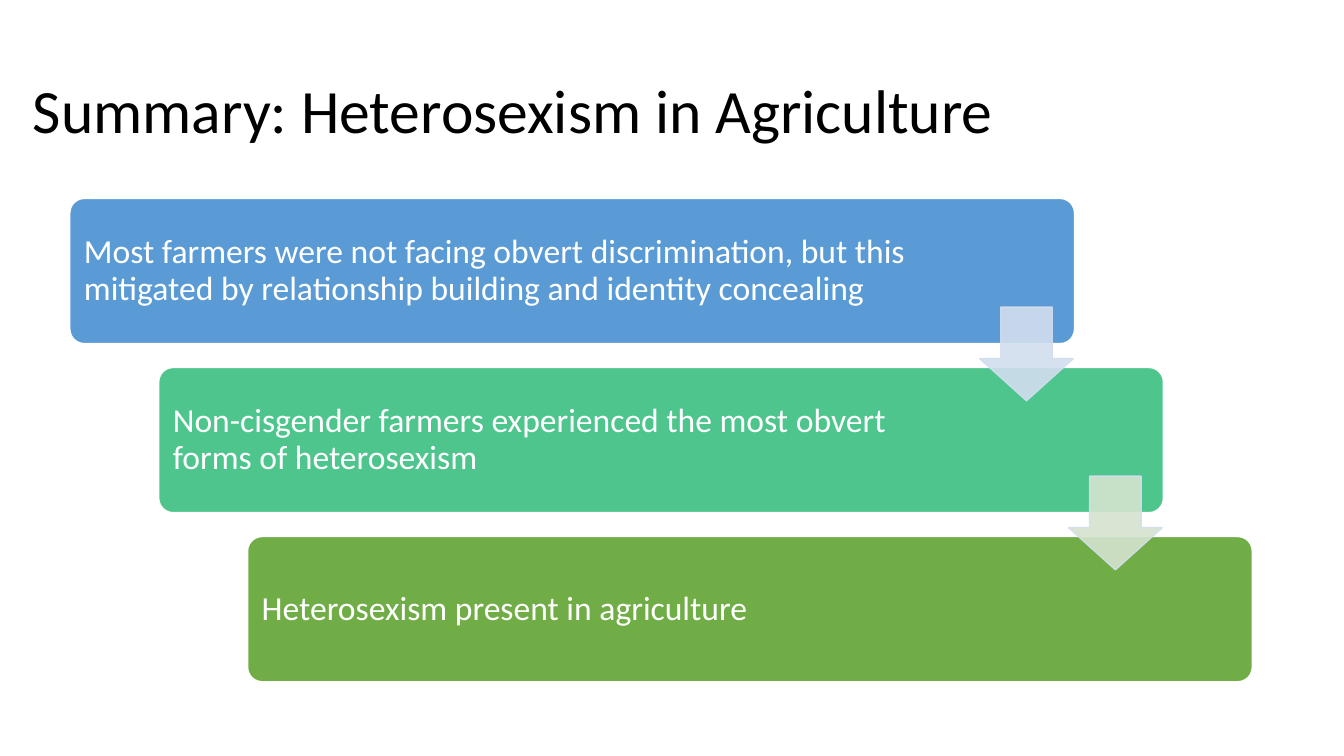
"""Build the summary slide: three staggered steps joined by down arrows."""
from dataclasses import dataclass

from lxml import etree
from pptx import Presentation
from pptx.dml.color import RGBColor
from pptx.enum import shapes, text
from pptx.oxml import ns
from pptx.util import Cm, Pt


@dataclass(frozen=True)
class Theme:
    font: str = "Calibri"
    title_size: int = 44
    step_size: int = 24
    title_color: str = "000000"
    white: str = "FFFFFF"
    step_fills: tuple = ("5B9BD5", "4DC58D", "70AD47")
    arrow_fills: tuple = ("D2DEEF", "D5E3CF")
    arrow_line: str = "D2DEEF"
    arrow_opacity: int = 90


def write_text(box, wording, size, color):
    frame = box.text_frame
    frame.text = wording
    frame.word_wrap = True
    frame.vertical_anchor = text.MSO_ANCHOR.MIDDLE
    para = frame.paragraphs[0]
    para.alignment = text.PP_ALIGN.LEFT
    para.line_spacing = 0.9
    font = para.runs[0].font
    font.name = theme.font
    font.size = Pt(size)
    font.color.rgb = RGBColor.from_string(color)


def add_block(kind, left, top, width, height, fill, line):
    block = page.shapes.add_shape(kind, Cm(left), Cm(top), Cm(width), Cm(height))
    block.shadow.inherit = False
    block.fill.solid()
    block.fill.fore_color.rgb = RGBColor.from_string(fill)
    block.line.color.rgb = RGBColor.from_string(line)
    block.line.width = Pt(1)
    return block


theme = Theme()
deck = Presentation()
deck.slide_width, deck.slide_height = Cm(33.87), Cm(19.05)
page = deck.slides.add_slide(deck.slide_layouts[6])

title = page.shapes.add_textbox(Cm(0.58), Cm(1.02), Cm(30.94), Cm(3.68))
write_text(title, "Summary: Heterosexism in Agriculture", theme.title_size, theme.title_color)

shift_x, shift_y = 2.24, 4.26
steps = [
    ("Most farmers were not facing obvert discrimination, but this "
     "mitigated by relationship building and identity concealing", 3.99),
    ("Non-cisgender farmers experienced the most obvert forms of heterosexism", 4.88),
    ("Heterosexism present in agriculture", 4.88),
]
for index, ((wording, right_margin), fill) in enumerate(zip(steps, theme.step_fills)):
    step = add_block(shapes.MSO_SHAPE.ROUNDED_RECTANGLE, 1.76 + index * shift_x,
                     5 + index * shift_y, 25.32, 3.66, fill, theme.white)
    step.adjustments[0] = 0.1
    write_text(step, wording, theme.step_size, theme.white)
    step.text_frame.margin_left = Cm(0.25)
    step.text_frame.margin_right = Cm(right_margin)

for index, fill in enumerate(theme.arrow_fills):
    arrow = add_block(shapes.MSO_SHAPE.DOWN_ARROW, 24.69 + index * shift_x,
                      7.74 + index * shift_y, 2.36, 2.36, fill, theme.arrow_line)
    arrow.adjustments[0] = 0.55
    arrow.adjustments[1] = 0.45
    for color in arrow.element.spPr.iter(ns.qn("a:srgbClr")):
        alpha = etree.SubElement(color, ns.qn("a:alpha"))
        alpha.set("val", str(theme.arrow_opacity * 1000))

deck.save("out.pptx")
